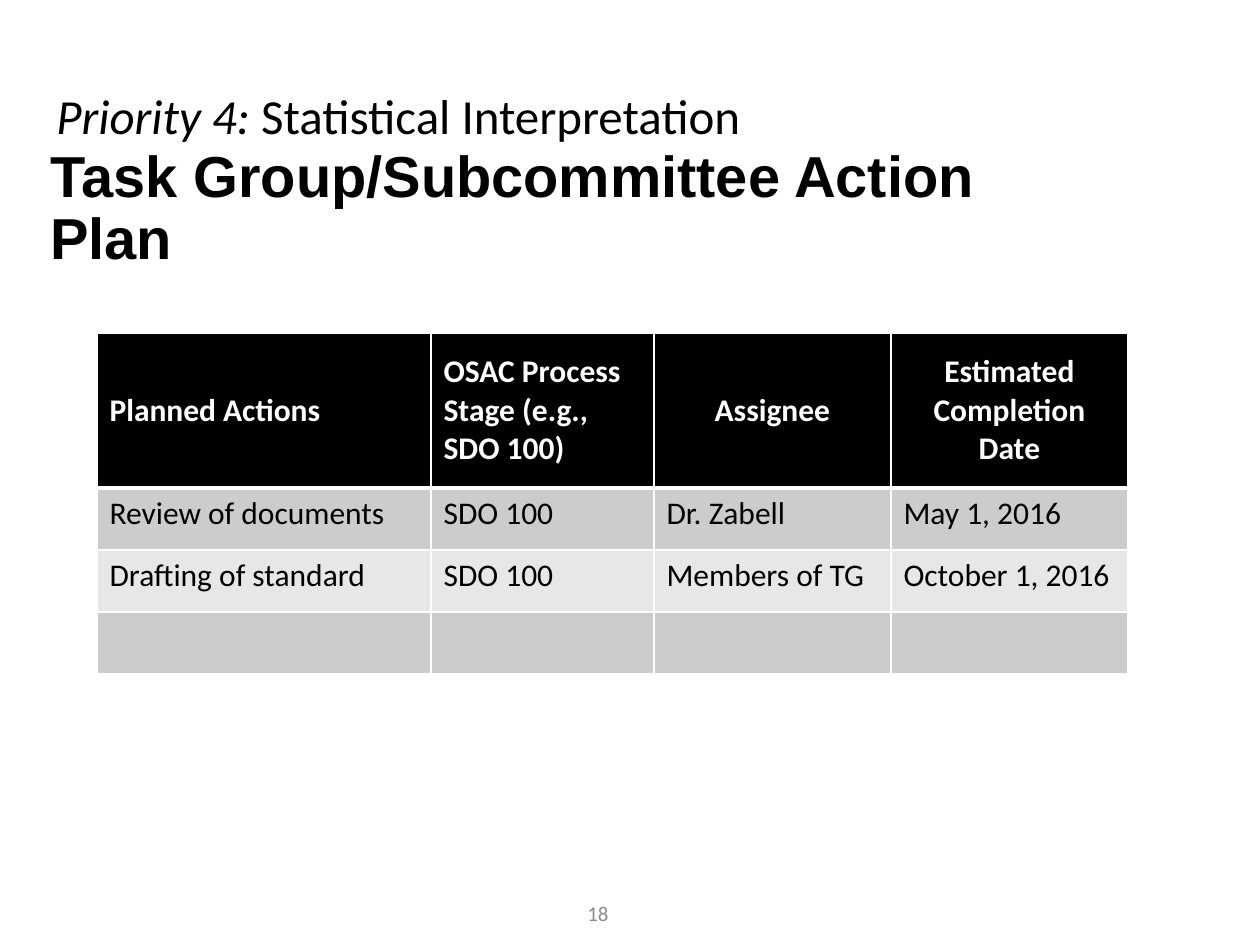
from lxml import etree
from pptx import Presentation
from pptx import util as u
from pptx.dml.color import RGBColor
from pptx.enum import text
from pptx.oxml import ns

BLACK = RGBColor(0x00, 0x00, 0x00)
WHITE = RGBColor(0xFF, 0xFF, 0xFF)
DARK_BAND = RGBColor(0xCC, 0xCC, 0xCC)
LIGHT_BAND = RGBColor(0xE7, 0xE7, 0xE7)
NUMBER_GRAY = RGBColor(0x8C, 0x8C, 0x8C)
EMU_PER_PX = 914400 / 126


def px(*lengths):
    return [u.Emu(round(length * EMU_PER_PX)) for length in lengths]


def style(run, size, color, name="Calibri", bold=False, italic=False):
    run.font.size = u.Pt(size)
    run.font.name = name
    run.font.bold = bold
    run.font.italic = italic
    run.font.color.rgb = color


deck = Presentation()
deck.slide_width, deck.slide_height = px(1260, 945)
slide = deck.slides.add_slide(deck.slide_layouts[6])

title = slide.shapes.add_textbox(*px(38, 118, 1086, 183)).text_frame
title.word_wrap = True
title.vertical_anchor = text.MSO_ANCHOR.MIDDLE
title.text = "Task Group/Subcommittee Action Plan"
title.paragraphs[0].line_spacing = 0.9
style(title.paragraphs[0].runs[0], 33, BLACK, "Arial", bold=True)

rows = [
    ["Planned Actions", "OSAC Process Stage (e.g., SDO 100)", "Assignee", "Estimated Completion Date"],
    ["Review of documents", "SDO 100", "Dr. Zabell", "May 1, 2016"],
    ["Drafting of standard", "SDO 100", "Members of TG", "October 1, 2016"],
    ["", "", "", ""],
]
column_widths = px(334, 223, 237, 237)
row_heights = px(155, 62, 62, 62)
row_fills = [BLACK, DARK_BAND, LIGHT_BAND, DARK_BAND]

plan = slide.shapes.add_table(
    len(rows), len(column_widths), *px(97, 333), sum(column_widths), sum(row_heights)
).table
for column, width in zip(plan.columns, column_widths):
    column.width = width

for r, labels in enumerate(rows):
    plan.rows[r].height = row_heights[r]
    header = r == 0
    for c, label in enumerate(labels):
        cell = plan.cell(r, c)
        properties = cell._tc.get_or_add_tcPr()
        for side in ("lnL", "lnR", "lnT", "lnB"):
            heavy = (side == "lnB" and r == 0) or (side == "lnT" and r == 1)
            border = etree.SubElement(properties, ns.qn("a:" + side), w=str(u.Pt(3 if heavy else 1)))
            line_fill = etree.SubElement(border, ns.qn("a:solidFill"))
            etree.SubElement(line_fill, ns.qn("a:srgbClr"), val=str(WHITE))
        cell.fill.solid()
        cell.fill.fore_color.rgb = row_fills[r]
        cell.vertical_anchor = text.MSO_ANCHOR.MIDDLE if header else text.MSO_ANCHOR.TOP
        cell.text_frame.text = label
        paragraph = cell.text_frame.paragraphs[0]
        if header and c >= 2:
            paragraph.alignment = text.PP_ALIGN.CENTER
        for run in paragraph.runs:
            style(run, 18, WHITE if header else BLACK, bold=header)

priority = slide.shapes.add_textbox(*px(44, 79, 771, 72)).text_frame
priority.word_wrap = True
for words, italic in (("Priority 4: ", True), ("Statistical Interpretation", False)):
    run = priority.paragraphs[0].add_run()
    run.text = words
    style(run, 28, BLACK, italic=italic)

page_number = slide.shapes.add_textbox(*px(456, 888, 284, 50)).text_frame
page_number.word_wrap = True
page_number.vertical_anchor = text.MSO_ANCHOR.MIDDLE
page_number.text = "18"
page_number.paragraphs[0].alignment = text.PP_ALIGN.CENTER
style(page_number.paragraphs[0].runs[0], 12, NUMBER_GRAY)

deck.save("out.pptx")
